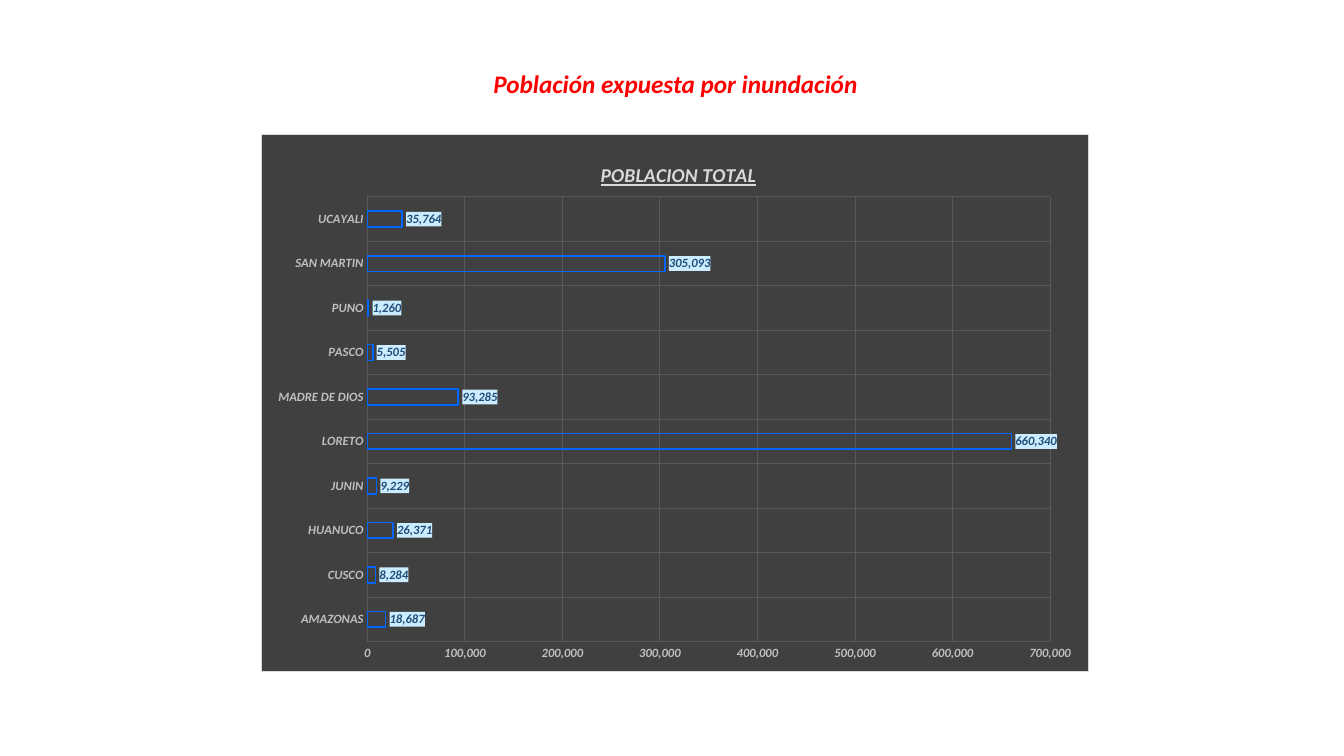
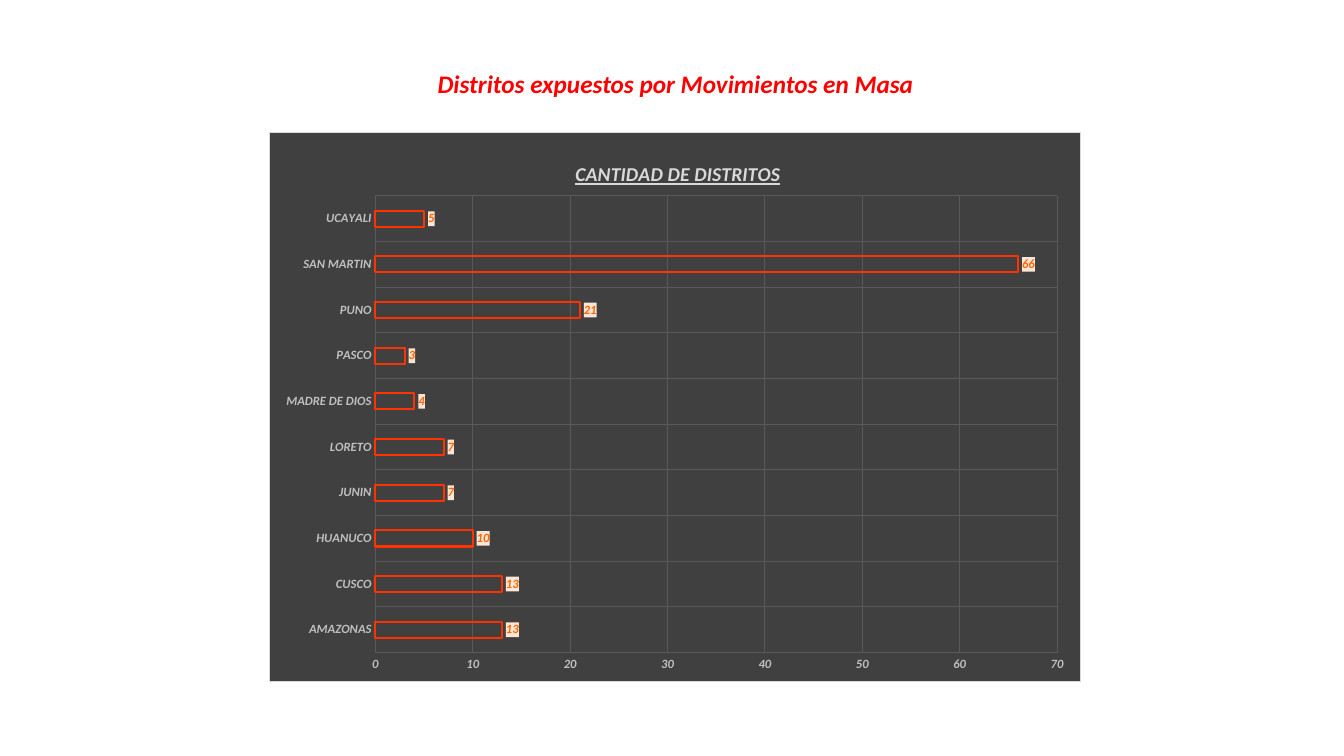
from lxml import etree
from pptx import Presentation
from pptx.chart.data import CategoryChartData
from pptx.dml.color import RGBColor
from pptx.enum.chart import XL_CHART_TYPE, XL_LABEL_POSITION, XL_TICK_MARK
from pptx.enum.text import MSO_ANCHOR, PP_ALIGN
from pptx.oxml import parse_xml
from pptx.oxml.ns import nsdecls, qn
from pptx.util import Inches, Pt

BAR = XL_CHART_TYPE.BAR_CLUSTERED
OUTSIDE_END = XL_LABEL_POSITION.OUTSIDE_END
NO_TICK = XL_TICK_MARK.NONE
CENTER = PP_ALIGN.CENTER
MIDDLE = MSO_ANCHOR.MIDDLE

FONT = "Calibri"
NUMBER_FORMAT = "#,##0"
TITLE_RED = "FF0000"
PANEL = "404040"
PANEL_BORDER = "D9D9D9"
HEADING = "D9D9D9"
AXIS_TEXT = "BFBFBF"
GRID = "595959"

SLIDE_WIDTH, SLIDE_HEIGHT = 13.33, 7.5
TITLE_BOX = (2.7, 0.63, 8, 0.4)
REGIONS = ("AMAZONAS", "CUSCO", "HUANUCO", "JUNIN", "LORETO",
           "MADRE DE DIOS", "PASCO", "PUNO", "SAN MARTIN", "UCAYALI")

SLIDES = (
    dict(title="Población expuesta por inundación",
         heading="POBLACION TOTAL", heading_at=(5.92, 1.56),
         panel=(2.59, 1.33, 8.21, 5.34), plot=(3.64, 1.95, 6.78, 4.42),
         values=(18687, 8284, 26371, 9229, 660340, 93285, 5505, 1260, 305093, 35764),
         maximum=700000, outline="0066FF", outline_width=1.25,
         label_color="1F4E79", label_fill="CCECFF"),
    dict(title="Distritos expuestos por Movimientos en Masa",
         heading="CANTIDAD DE DISTRITOS", heading_at=(5.67, 1.55),
         panel=(2.67, 1.31, 8.05, 5.46), plot=(3.72, 1.94, 6.77, 4.54),
         values=(13, 13, 10, 7, 7, 4, 3, 21, 66, 5),
         maximum=70, outline="FF3300", outline_width=1.5,
         label_color="FF6600", label_fill="FBE5D6"),
)


def rgb(value):
    """Turn a hex string into a colour."""
    return RGBColor.from_string(value)


def style_font(font, size, color, underline=False):
    """Apply the bold italic face that all text shares."""
    font.name = FONT
    font.size = Pt(size)
    font.bold = font.italic = True
    font.underline = underline
    font.color.rgb = rgb(color)


def write_text(frame, text, size, color, underline=False):
    """Write one centred line into a text frame."""
    paragraph = frame.paragraphs[0]
    paragraph.alignment = CENTER
    run = paragraph.add_run()
    run.text = text
    style_font(run.font, size, color, underline)


def add_title(slide, title):
    """Add the red slide title."""
    frame = slide.shapes.add_textbox(*map(Inches, TITLE_BOX)).text_frame
    frame.word_wrap = True
    frame.vertical_anchor = MIDDLE
    write_text(frame, title, size=18, color=TITLE_RED)


def fill_properties(fill, border=None):
    """Build chart shape properties with a fill and an optional border."""
    line = ""
    if border:
        line = (f'<a:ln w="{Pt(0.75)}"><a:solidFill><a:srgbClr val="{border}"/>'
                '</a:solidFill></a:ln>')
    return parse_xml(f'<c:spPr {nsdecls("c", "a")}><a:solidFill>'
                     f'<a:srgbClr val="{fill}"/></a:solidFill>{line}</c:spPr>')


def place(layout, panel, position, inner=False):
    """Fix a chart part at slide inches, as fractions of the panel."""
    left, top, width, height = panel
    fractions = {"x": (position[0] - left) / width, "y": (position[1] - top) / height}
    if inner:
        fractions.update(w=position[2] / width, h=position[3] / height)
    settings = [("layoutTarget", "inner")] if inner else []
    settings += [(f"{key}Mode", "edge") for key in ("x", "y")]
    settings += [(key, f"{value:.4f}") for key, value in fractions.items()]
    for child in list(layout):
        layout.remove(child)
    manual = etree.SubElement(layout, qn("c:manualLayout"))
    for tag, value in settings:
        etree.SubElement(manual, qn(f"c:{tag}")).set("val", value)


def layout_of(part, index):
    """Return the layout of a chart part, adding it at the index if absent."""
    layout = part.find(qn("c:layout"))
    if layout is None:
        layout = parse_xml(f'<c:layout {nsdecls("c")}/>')
        part.insert(index, layout)
    return layout


def style_axis(axis):
    """Give an axis grey labels, a faint grid and no line."""
    axis.major_tick_mark = axis.minor_tick_mark = NO_TICK
    axis.format.line.fill.background()
    axis.has_major_gridlines = True
    grid = axis.major_gridlines.format.line
    grid.width = Pt(0.75)
    grid.color.rgb = rgb(GRID)
    style_font(axis.tick_labels.font, 9, AXIS_TEXT)


def style_bars(chart, outline, outline_width, label_color, label_fill):
    """Draw hollow bars with highlighted values at their ends."""
    plot = chart.plots[0]
    plot.gap_width = 182
    plot.overlap = -50
    plot.vary_by_categories = False
    bars = plot.series[0]
    bars.invert_if_negative = False
    bars.format.fill.background()
    bars.format.line.color.rgb = rgb(outline)
    bars.format.line.width = Pt(outline_width)
    plot.has_data_labels = True
    labels = plot.data_labels
    labels.show_value = True
    labels.position = OUTSIDE_END
    labels.number_format = NUMBER_FORMAT
    labels.number_format_is_linked = False
    style_font(labels.font, 9, label_color)
    text_style = labels._element.find(qn("c:txPr"))
    text_style.addprevious(fill_properties(label_fill))


def add_bar_panel(slide, heading, heading_at, panel, plot, values, maximum, **bar_style):
    """Add the dark panel with one bar per region."""
    data = CategoryChartData(number_format=NUMBER_FORMAT)
    data.categories = REGIONS
    data.add_series(heading, values)
    chart = slide.shapes.add_chart(BAR, *map(Inches, panel), data).chart
    chart.has_legend = False
    chart.font.name = FONT
    chart.font.size = Pt(10)
    chart.font.color.rgb = rgb("000000")

    chart.has_title = True
    write_text(chart.chart_title.text_frame, heading, size=14, color=HEADING, underline=True)
    chart.chart_title.include_in_layout = False

    for axis in (chart.category_axis, chart.value_axis):
        style_axis(axis)
    scale = chart.value_axis
    scale.minimum_scale = 0
    scale.maximum_scale = maximum
    scale.major_unit = maximum / 7
    scale.tick_labels.number_format = NUMBER_FORMAT
    scale.tick_labels.number_format_is_linked = False
    style_bars(chart, **bar_style)

    body = chart.element.find(qn("c:chart"))
    body.addnext(fill_properties(PANEL, PANEL_BORDER))
    place(layout_of(body.find(qn("c:title")), 1), panel, heading_at)
    place(layout_of(body.find(qn("c:plotArea")), 0), panel, plot, inner=True)


def main():
    """Build and save the presentation."""
    deck = Presentation()
    deck.slide_width = Inches(SLIDE_WIDTH)
    deck.slide_height = Inches(SLIDE_HEIGHT)
    for content in SLIDES:
        slide = deck.slides.add_slide(deck.slide_layouts[6])
        details = dict(content)
        add_title(slide, details.pop("title"))
        add_bar_panel(slide, **details)
    deck.save("out.pptx")


if __name__ == "__main__":
    main()
